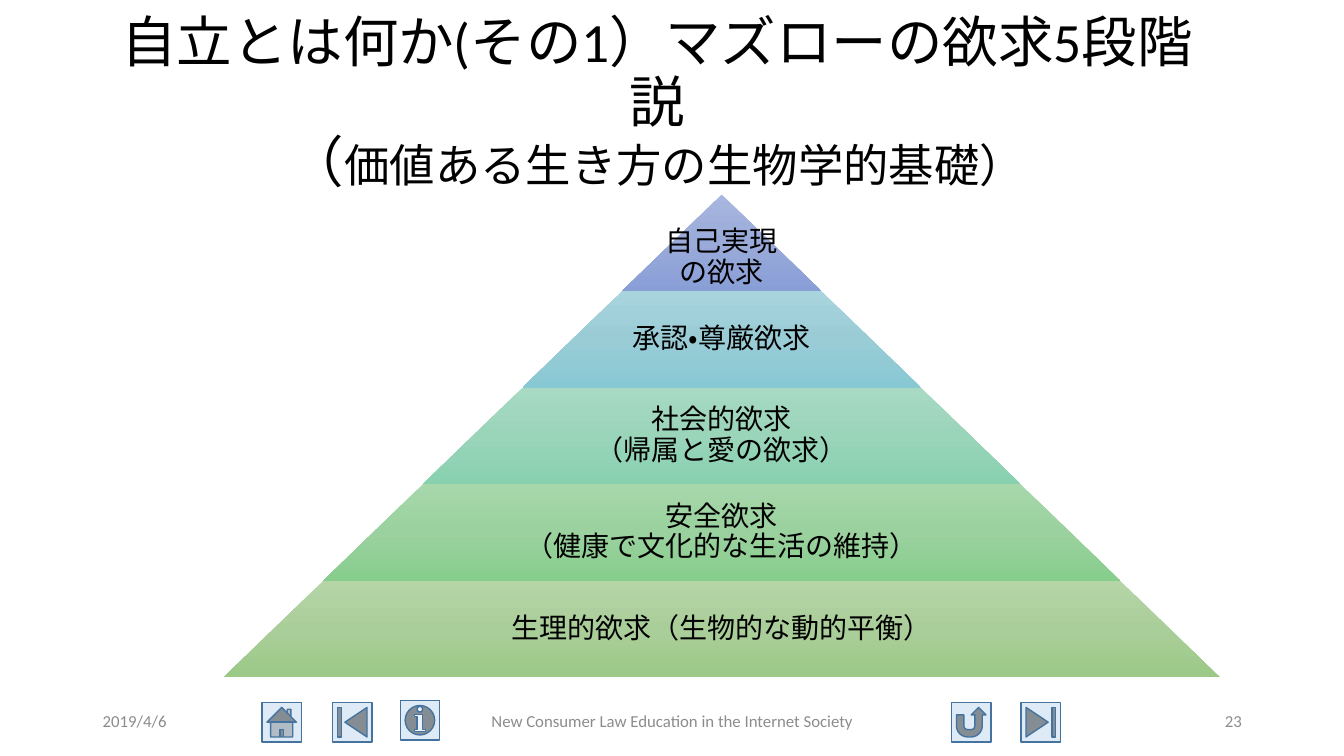
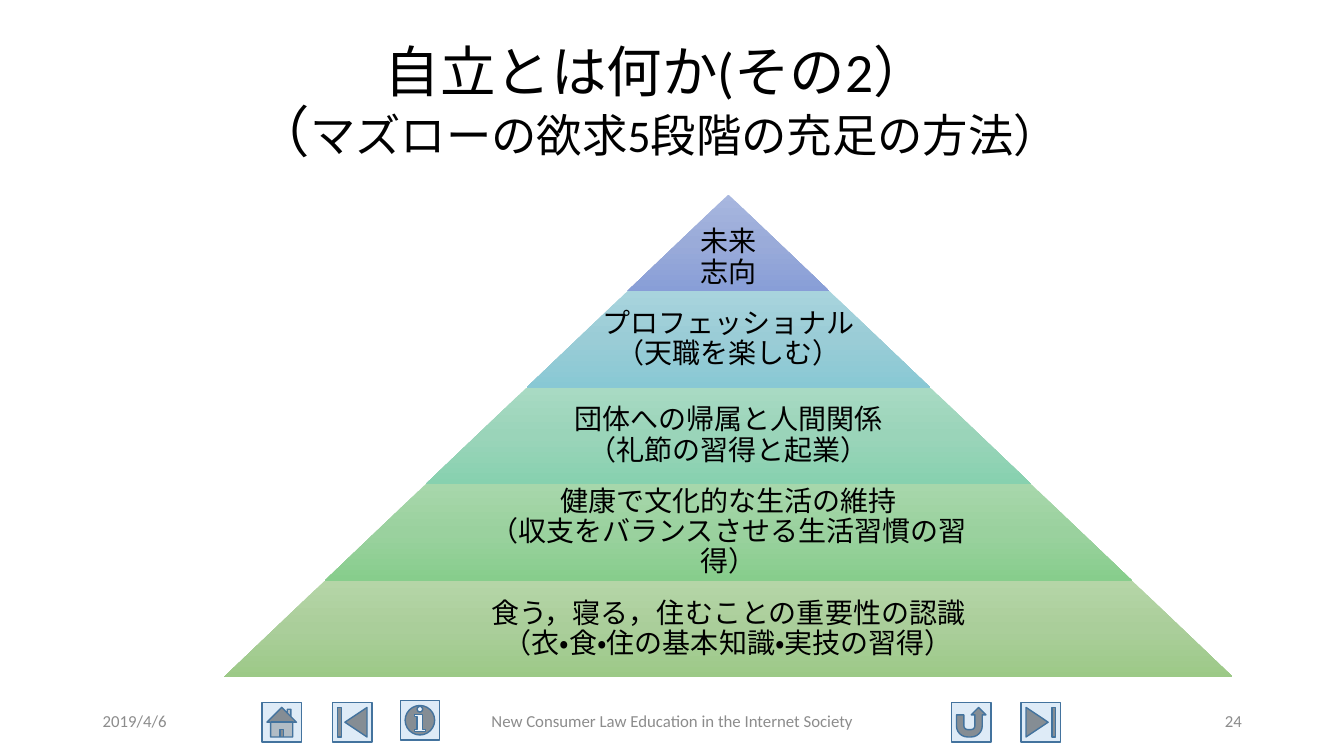
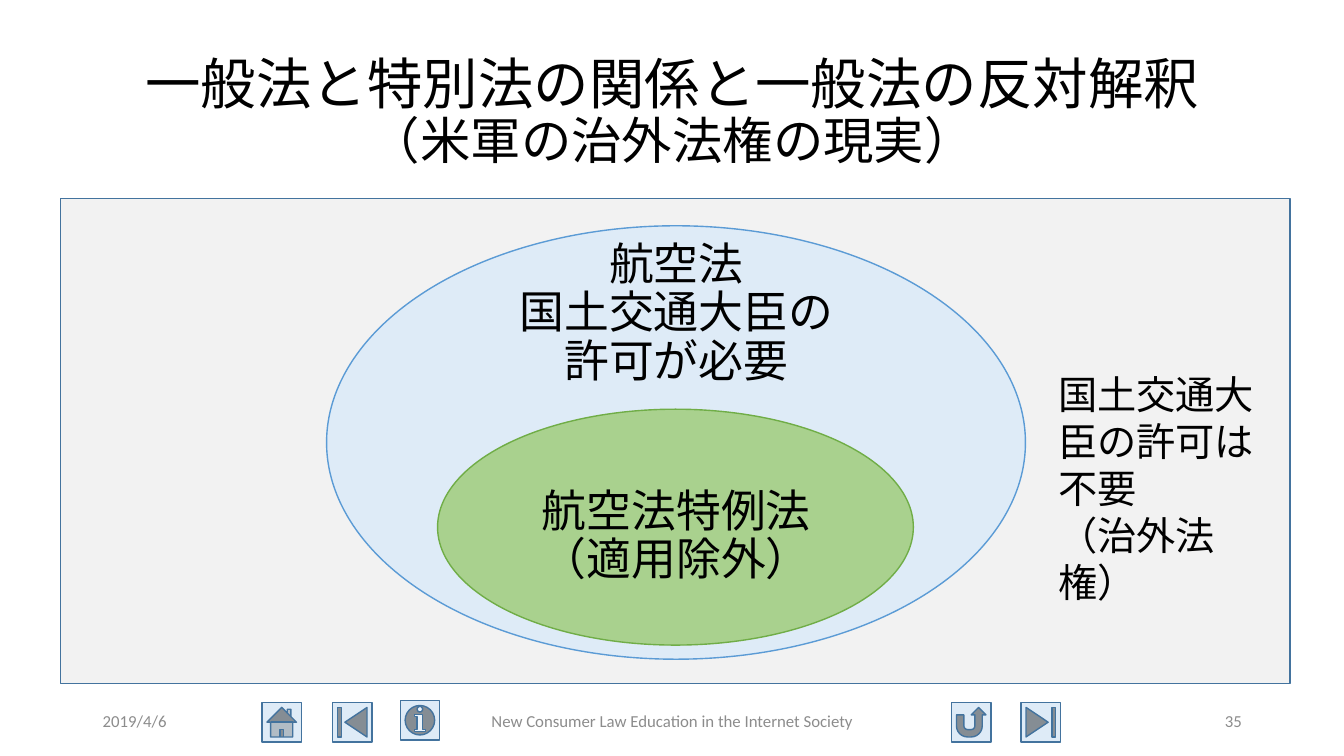
from copy import deepcopy

from pptx import Presentation
from pptx.dml.color import RGBColor
from pptx.enum.lang import MSO_LANGUAGE_ID
from pptx.enum.shapes import MSO_SHAPE
from pptx.enum.text import MSO_ANCHOR, MSO_AUTO_SIZE, PP_ALIGN
from pptx.oxml.ns import qn
from pptx.util import Inches, Pt

COLOURS = {
    "ink": "000000", "footer": "8C8C8C", "outline": "43739E",
    "pale_blue": "DEEBF7", "blue": "5B9BD5", "grey": "F2F2F2",
    "light_green": "A9D18E", "green": "70AD47",
}
TIER_GRADIENTS = [
    ("A8B7DF", "9AABD9", "889ED7"),
    ("A8D4DD", "9ACCD6", "88C8D4"),
    ("A8DAC3", "9AD4B9", "87D1AF"),
    ("A7D7AB", "9AD19E", "87CD8C"),
    ("B5D5A7", "AACE9A", "9CC987"),
]
BUTTONS = [
    (MSO_SHAPE.ACTION_BUTTON_HOME, 19.5, 92.93),
    (MSO_SHAPE.ACTION_BUTTON_BEGINNING, 24.75, 92.93),
    (MSO_SHAPE.ACTION_BUTTON_INFORMATION, 29.78, 92.67),
    (MSO_SHAPE.ACTION_BUTTON_RETURN, 70.8, 92.93),
    (MSO_SHAPE.ACTION_BUTTON_END, 75.98, 92.93),
]
TITLE_AREA = (6.9, 5.33, 83.95, 16.93)


class Deck:
    """Holds the shared style and the current slide; areas are percentages of the slide."""

    def __init__(self):
        """Start a widescreen presentation."""
        self.file = Presentation()
        self.file.slide_width = Inches(13.33)
        self.file.slide_height = Inches(7.5)
        self.page = None

    def place(self, left, top, width, height):
        """Turn percentages of the slide into lengths."""
        across, down = self.file.slide_width / 100, self.file.slide_height / 100
        return int(left * across), int(top * down), int(width * across), int(height * down)

    def add_page(self, number, title_spans, title_area=TITLE_AREA):
        """Add a slide with its title, buttons and footer."""
        self.page = self.file.slides.add_slide(self.file.slide_layouts[5])
        title = self.page.shapes.title
        title.left, title.top, title.width, title.height = self.place(*title_area)
        self.fill_text(title, title_spans, spacing=0.9)
        for kind, left, top in BUTTONS:
            self.shape(kind, (left, top, 2.93, 5.2), "pale_blue", "outline")
        footers = [
            ("2019/4/6", 6.9, 22.5, PP_ALIGN.LEFT),
            ("New Consumer Law Education in the Internet Society", 33.15, 33.75, PP_ALIGN.CENTER),
            (str(number), 70.65, 22.5, PP_ALIGN.RIGHT),
        ]
        for words, left, width, align in footers:
            self.text((left, 92.67, width, 5.33), [(words, 12)], align=align, colour="footer")

    def fill_text(self, box, spans, align=PP_ALIGN.CENTER, anchor=MSO_ANCHOR.MIDDLE,
                  spacing=1.0, colour="ink"):
        """Put (words, size) spans into one paragraph of a box."""
        frame = box.text_frame
        frame.word_wrap = True
        frame.auto_size = MSO_AUTO_SIZE.NONE
        frame.vertical_anchor = anchor
        para = frame.paragraphs[0]
        para.alignment = align
        para.line_spacing = spacing
        for words, size in spans:
            for index, line in enumerate(words.split("\n")):
                if index:
                    para.add_line_break()
                if line:
                    span = para.add_run()
                    span.text = line
                    span.font.size = Pt(size)
                    span.font.name = "Calibri"
                    span.font.language_id = MSO_LANGUAGE_ID.JAPANESE
                    span.font.color.rgb = RGBColor.from_string(COLOURS[colour])

    def text(self, area, spans, margins=(0.1, 0.05), **style):
        """Add a text box with horizontal and vertical margins in inches."""
        box = self.page.shapes.add_textbox(*self.place(*area))
        frame = box.text_frame
        frame.margin_left = frame.margin_right = Inches(margins[0])
        frame.margin_top = frame.margin_bottom = Inches(margins[1])
        self.fill_text(box, spans, **style)

    def shape(self, kind, area, fill, line):
        """Add a flat shape with an outline."""
        shape = self.page.shapes.add_shape(kind, *self.place(*area))
        shape.shadow.inherit = False
        shape.fill.solid()
        shape.fill.fore_color.rgb = RGBColor.from_string(COLOURS[fill])
        shape.line.color.rgb = RGBColor.from_string(COLOURS[line])
        shape.line.width = Pt(1)

    def tier(self, area, gradient):
        """Add one pyramid tier with a three-stop gradient."""
        tier = self.page.shapes.add_shape(MSO_SHAPE.TRAPEZOID, *self.place(*area))
        tier.shadow.inherit = False
        tier.line.fill.background()
        tier.fill.gradient()
        tier.fill.gradient_angle = 270
        stops = tier.element.find(".//" + qn("a:gsLst"))
        stops.insert(1, deepcopy(stops[0]))
        for stop, colour, position in zip(tier.fill.gradient_stops, gradient, (0, 0.5, 1)):
            stop.color.rgb = RGBColor.from_string(colour)
            stop.position = position
        return tier

    def pyramid(self, width, labels):
        """Stack labelled tiers from the apex down."""
        left, top, height = 16.65, 25.73, 63.87 / len(labels)
        step = width / len(labels)
        for index, (label, gradient) in enumerate(zip(labels, TIER_GRADIENTS)):
            tier_width = step * (index + 1)
            tier_left = left + (width - tier_width) / 2
            tier_top = top + height * index
            tier = self.tier((tier_left, tier_top, tier_width, height), gradient)
            tier.adjustments[0] = tier.width / (2 * (index + 1)) / tier.height
            share = 0.65 if index else 1
            label_left = tier_left + tier_width * (1 - share) / 2
            self.text((label_left, tier_top, tier_width * share, height), [(label, 20)],
                      margins=(0.03, 0.03), spacing=0.9,
                      anchor=MSO_ANCHOR.MIDDLE if index else MSO_ANCHOR.BOTTOM)


def main():
    """Build the three slides."""
    deck = Deck()
    deck.add_page(23, [("自立とは何か(その1）マズローの欲求5段階説\n（", 39.6),
                       ("価値ある生き方の生物学的基礎）", 32.4)])
    deck.pyramid(74.1, [
        "自己実現\nの欲求",
        "承認・尊厳欲求",
        "社会的欲求\n（帰属と愛の欲求）",
        "安全欲求\n（健康で文化的な生活の維持）",
        "生理的欲求（生物的な動的平衡）",
    ])

    deck.add_page(24, [("自立とは何か(その2）\n（", 39.6),
                       ("マズローの欲求5段階の充足の方法）", 32.4)])
    deck.pyramid(75.1, [
        "未来\n志向",
        "プロフェッショナル\n（天職を楽しむ）",
        "団体への帰属と人間関係\n（礼節の習得と起業）",
        "健康で文化的な生活の維持\n（収支をバランスさせる生活習慣の習得）",
        "食う，寝る，住むことの重要性の認識\n（衣・食・住の基本知識・実技の習得）",
    ])

    deck.add_page(35, [("一般法と特別法の関係と一般法の反対解釈\n", 39.6),
                       ("（米軍の治外法権の現実）", 36)], (6.9, 5.33, 86.25, 19.33))
    deck.shape(MSO_SHAPE.RECTANGLE, (4.5, 26.27, 91.5, 64.13), "grey", "outline")
    deck.shape(MSO_SHAPE.OVAL, (24.3, 29.87, 52, 57.33), "pale_blue", "blue")
    deck.shape(MSO_SHAPE.OVAL, (32.56, 54.13, 35.4, 31.2), "light_green", "green")
    deck.text((36.68, 32.1, 27.3, 19), [("航空法\n国土交通大臣の許可が必要", 32)],
              margins=(0.25, 0), spacing=0.9)
    deck.text((37.8, 63.2, 25.05, 15.6), [("航空法特例法\n（適用除外）", 32)],
              margins=(0.25, 0), spacing=0.9)
    deck.text((78, 48.27, 16.58, 26.53), [("国土交通大臣の許可は不要\n（治外法権）", 28)],
              align=PP_ALIGN.LEFT, anchor=MSO_ANCHOR.TOP)
    deck.file.save("out.pptx")


if __name__ == "__main__":
    main()
